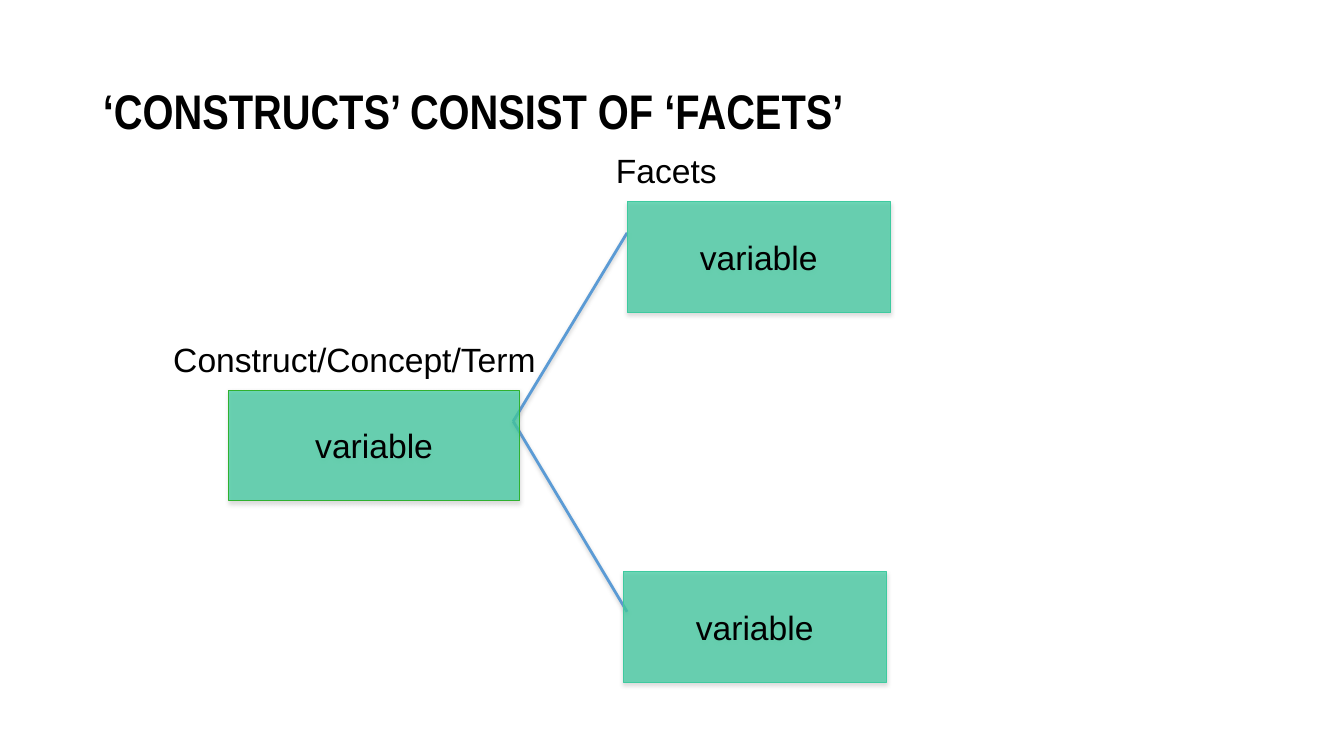
"""Build a slide showing a construct split into its facets."""
from dataclasses import dataclass

from lxml.etree import SubElement
from pptx import Presentation
from pptx.dml.color import RGBColor
from pptx.enum.shapes import MSO_CONNECTOR, MSO_SHAPE
from pptx.enum.text import MSO_ANCHOR, MSO_AUTO_SIZE, PP_ALIGN
from pptx.oxml.ns import qn
from pptx.slide import Slide
from pptx.text.text import TextFrame
from pptx.util import Inches, Pt


@dataclass(frozen=True)
class Theme:
    """Colours, fonts and sizes of the slide."""
    ink: str = "000000"
    fill: str = "3ECA9F"
    edge: str = "30B12F"
    link: str = "5B9BD5"
    shade: str = "808080"
    head: str = "Arial Narrow"
    body: str = "Arial"
    large: float = 34.7
    small: float = 24
    alpha: int = 74


@dataclass(frozen=True)
class Box:
    """A variable box with its place, width and edge colour."""
    left: float
    top: float
    width: float
    edge: str


@dataclass(frozen=True)
class Label:
    """A caption with its place and width."""
    text: str
    left: float
    top: float
    width: float


THEME = Theme()
HUB = (5.09, 4.18)
ENDS = [(6.22, 6.07), (6.22, 2.31)]
BOXES = [
    Box(2.27, 3.87, 2.88, THEME.edge),
    Box(6.18, 5.67, 2.61, THEME.fill),
    Box(6.22, 2, 2.61, THEME.fill),
]
LABELS = [
    Label("Construct/Concept/Term", 1.62, 3.31, 3.83),
    Label("Facets", 6.01, 1.44, 1.21),
]


def write(frame: TextFrame, text: str, face: str, size: float,
          align: PP_ALIGN = PP_ALIGN.LEFT, bold: bool = False) -> None:
    """Fill a frame with one formatted line."""
    frame.text = text
    line = frame.paragraphs[0]
    line.alignment = align
    font = line.runs[0].font
    font.name, font.size, font.bold = face, Pt(size), bold
    font.color.rgb = RGBColor.from_string(THEME.ink)


def shade(shape, alpha: int, dist: float) -> None:
    """Give a shape a soft shadow falling straight down."""
    props = shape.element.spPr
    list_ = SubElement(props, qn("a:effectLst"))
    drop = SubElement(list_, qn("a:outerShdw"), blurRad=str(Pt(3.1)),
                      dist=str(Pt(dist)), dir=str(90 * 60000),
                      rotWithShape="0")
    tint = SubElement(drop, qn("a:srgbClr"), val=THEME.shade)
    SubElement(tint, qn("a:alpha"), val=str(alpha * 1000))


def add_title(slide: Slide, text: str) -> None:
    """Place and format the title."""
    title = slide.shapes.title
    title.left, title.top = Inches(0.92), Inches(0.4)
    title.width, title.height = Inches(11.5), Inches(1.45)
    frame = title.text_frame
    frame.auto_size = MSO_AUTO_SIZE.NONE
    frame.vertical_anchor = MSO_ANCHOR.MIDDLE
    write(frame, text, THEME.head, THEME.large, bold=True)
    frame.paragraphs[0].line_spacing = 0.9


def add_link(slide: Slide, end: tuple[float, float]) -> None:
    """Draw a line from a facet to the hub."""
    link = slide.shapes.add_connector(
        MSO_CONNECTOR.STRAIGHT, *map(Inches, end + HUB))
    link.line.color.rgb = RGBColor.from_string(THEME.link)
    link.line.width = Pt(2)
    shade(link, 38, 1.6)


def add_box(slide: Slide, box: Box) -> None:
    """Draw a see-through variable box."""
    shape = slide.shapes.add_shape(
        MSO_SHAPE.RECTANGLE, Inches(box.left), Inches(box.top),
        Inches(box.width), Inches(1.1))
    shape.fill.solid()
    shape.fill.fore_color.rgb = RGBColor.from_string(THEME.fill)
    tint = shape.element.spPr.find(qn("a:solidFill")).find(qn("a:srgbClr"))
    SubElement(tint, qn("a:alpha"), val=str(THEME.alpha * 1000))
    shape.line.color.rgb = RGBColor.from_string(box.edge)
    shape.line.width = Pt(0.75)
    shade(shape, 35, 1.8)
    shape.text_frame.vertical_anchor = MSO_ANCHOR.MIDDLE
    write(shape.text_frame, "variable", THEME.body, THEME.small,
          PP_ALIGN.CENTER)


def add_label(slide: Slide, label: Label) -> None:
    """Add a caption that stays on one line."""
    frame = slide.shapes.add_textbox(
        Inches(label.left), Inches(label.top),
        Inches(label.width), Inches(0.5)).text_frame
    frame.word_wrap = False
    frame.auto_size = MSO_AUTO_SIZE.SHAPE_TO_FIT_TEXT
    write(frame, label.text, THEME.body, THEME.small)


def main() -> None:
    """Build and save the deck."""
    deck = Presentation()
    deck.slide_width, deck.slide_height = Inches(13.33), Inches(7.5)
    slide = deck.slides.add_slide(deck.slide_layouts[5])
    add_title(slide, "‘CONSTRUCTS’ CONSIST OF ‘FACETS’")
    for end in ENDS:
        add_link(slide, end)
    for box in BOXES:
        add_box(slide, box)
    for label in LABELS:
        add_label(slide, label)
    deck.save("out.pptx")


if __name__ == "__main__":
    main()
